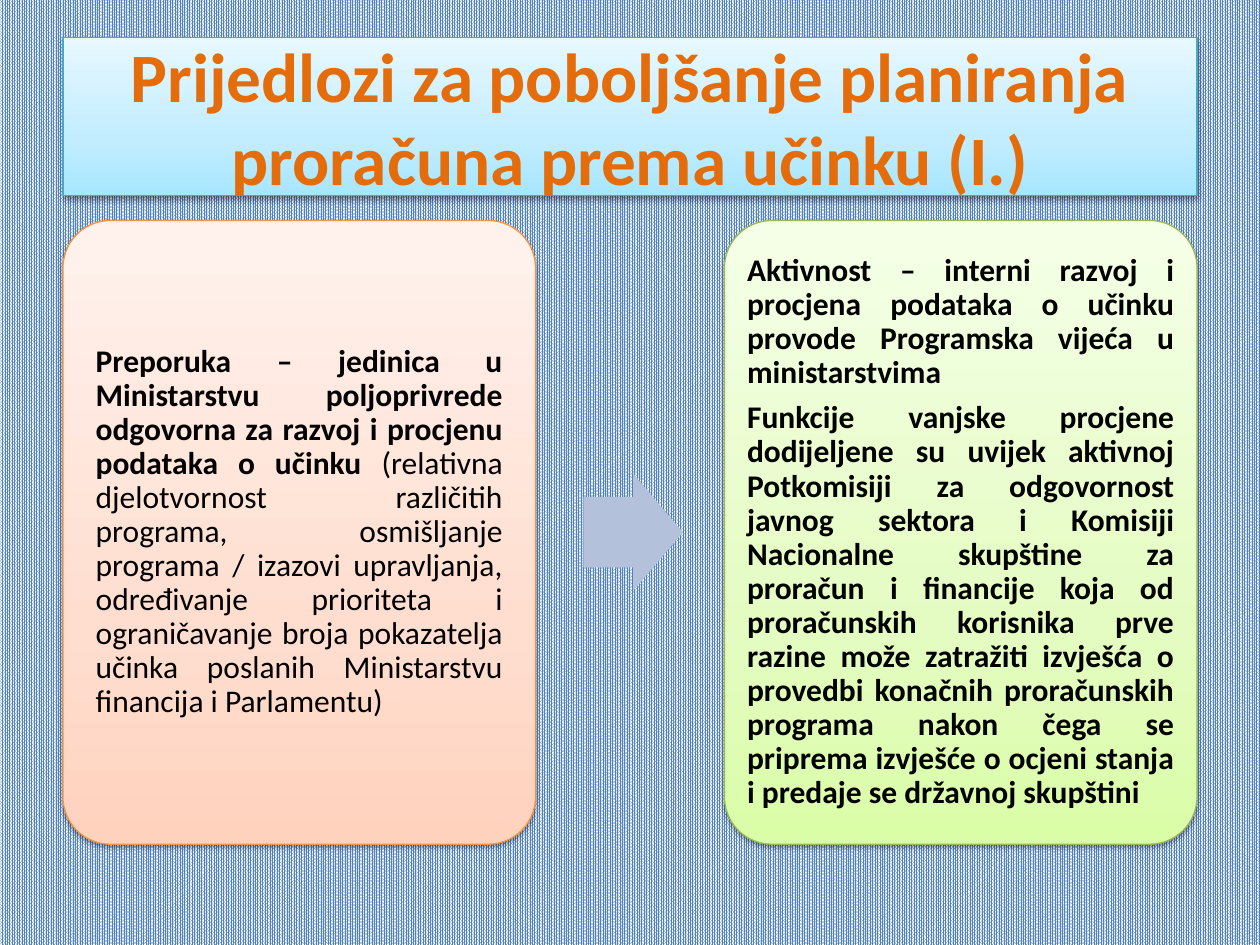
"""Builds a slide with a recommendation and an activity panel linked by an arrow."""
from lxml import etree
from pptx import Presentation
from pptx import util as u
from pptx.dml.color import RGBColor
from pptx.enum import dml, shapes, text
from pptx.oxml import ns

COLOURS = {
    "pattern": "4F81BD", "white": "FFFFFF", "title": "E46C0A", "text": "000000", "arrow": "B3C1DB",
    "blue": ["A7E6FF", "C1EDFF", "E7F8FF"], "blue line": "46AAC5",
    "orange": ["FFD2BD", "FFDED0", "FFF2ED"], "orange line": "F69240",
    "green": ["DAFDA7", "E4FCC2", "F5FFE7"], "green line": "98B955",
}


def style_panel(shape, hue):
    """Give a shape its three-stop gradient, outline and soft shadow."""
    shape.fill.gradient()
    shape.fill.gradient_angle = 90
    stops = shape._element.spPr.find(ns.qn("a:gradFill")).find(ns.qn("a:gsLst"))
    for stop in list(stops):
        stops.remove(stop)
    for position, colour in zip((0, 35, 100), COLOURS[hue]):
        stop = etree.SubElement(stops, ns.qn("a:gs"), pos=str(position * 1000))
        etree.SubElement(stop, ns.qn("a:srgbClr"), val=colour)
    shape.line.color.rgb = RGBColor.from_string(COLOURS[hue + " line"])
    shape.line.width = u.Pt(0.75)
    shape.shadow.inherit = False
    effects = shape._element.spPr.find(ns.qn("a:effectLst"))
    shadow = etree.SubElement(effects, ns.qn("a:outerShdw"), blurRad=str(u.Pt(3.1)),
                              dist=str(u.Pt(1.6)), dir="5400000", rotWithShape="0")
    shadow_colour = etree.SubElement(shadow, ns.qn("a:srgbClr"), val=COLOURS["text"])
    etree.SubElement(shadow_colour, ns.qn("a:alpha"), val="38000")


def add_text(paragraph, wording, size=18, colour="text", bold=True, align=text.PP_ALIGN.JUSTIFY):
    """Add a formatted run to a paragraph."""
    paragraph.alignment = align
    run = paragraph.add_run()
    run.text = wording
    run.font.name = "Calibri"
    run.font.size = u.Pt(size)
    run.font.bold = bold
    run.font.color.rgb = RGBColor.from_string(COLOURS[colour])


presentation = Presentation()
presentation.slide_width, presentation.slide_height = u.Inches(10), u.Inches(7.5)
slide = presentation.slides.add_slide(presentation.slide_layouts[5])

background = slide.background.fill
background.patterned()
background.pattern = dml.MSO_PATTERN.PERCENT_90
background.fore_color.rgb = RGBColor.from_string(COLOURS["pattern"])
background.back_color.rgb = RGBColor.from_string(COLOURS["white"])

title = slide.shapes.title
title.left, title.top, title.width, title.height = map(u.Inches, (0.5, 0.3, 9, 1.25))
style_panel(title, "blue")
title.text_frame.auto_size = text.MSO_AUTO_SIZE.NONE
title.text_frame.vertical_anchor = text.MSO_ANCHOR.MIDDLE
add_text(title.text_frame.paragraphs[0],
         "Prijedlozi za poboljšanje planiranja proračuna prema učinku (I.)",
         size=39.6, colour="title", align=text.PP_ALIGN.CENTER)

panels = [
    (0.5, "orange", 0.15, [[
        ("Preporuka – jedinica u Ministarstvu poljoprivrede odgovorna za razvoj i procjenu "
         "podataka o učinku", True),
        (" (relativna djelotvornost različitih programa, osmišljanje programa / izazovi "
         "upravljanja, određivanje prioriteta i ograničavanje broja pokazatelja učinka "
         "poslanih Ministarstvu financija i Parlamentu)", False)]]),
    (5.75, "green", 0.07, [
        [("Aktivnost – interni razvoj i procjena podataka o učinku provode Programska vijeća "
          "u ministarstvima", True)],
        [("Funkcije vanjske procjene dodijeljene su uvijek aktivnoj Potkomisiji za odgovornost "
          "javnog sektora i Komisiji Nacionalne skupštine za proračun i financije koja od "
          "proračunskih korisnika prve razine može zatražiti izvješća o provedbi konačnih "
          "proračunskih programa nakon čega se priprema izvješće o ocjeni stanja i predaje "
          "se državnoj skupštini", True)]]),
]
for left, hue, inset, paragraphs in panels:
    panel = slide.shapes.add_shape(shapes.MSO_SHAPE.ROUNDED_RECTANGLE, u.Inches(left),
                                   u.Inches(1.75), u.Inches(3.75), u.Inches(4.95))
    panel.adjustments[0] = 0.1
    style_panel(panel, hue)
    frame = panel.text_frame
    frame.word_wrap = True
    frame.vertical_anchor = text.MSO_ANCHOR.MIDDLE
    frame.margin_left = frame.margin_right = u.Inches(inset)
    frame.margin_top = frame.margin_bottom = u.Inches(inset)
    for index, runs in enumerate(paragraphs):
        paragraph = frame.add_paragraph() if index else frame.paragraphs[0]
        paragraph.line_spacing = 0.9
        paragraph.space_after = u.Pt(6.3)
        for wording, bold in runs:
            add_text(paragraph, wording, bold=bold)

arrow = slide.shapes.add_shape(shapes.MSO_SHAPE.RIGHT_ARROW, u.Inches(4.63), u.Inches(3.76),
                               u.Inches(0.79), u.Inches(0.93))
arrow.adjustments[0], arrow.adjustments[1] = 0.6, 0.5
arrow.fill.solid()
arrow.fill.fore_color.rgb = RGBColor.from_string(COLOURS["arrow"])
arrow.line.fill.background()
arrow.shadow.inherit = False

presentation.save("out.pptx")
